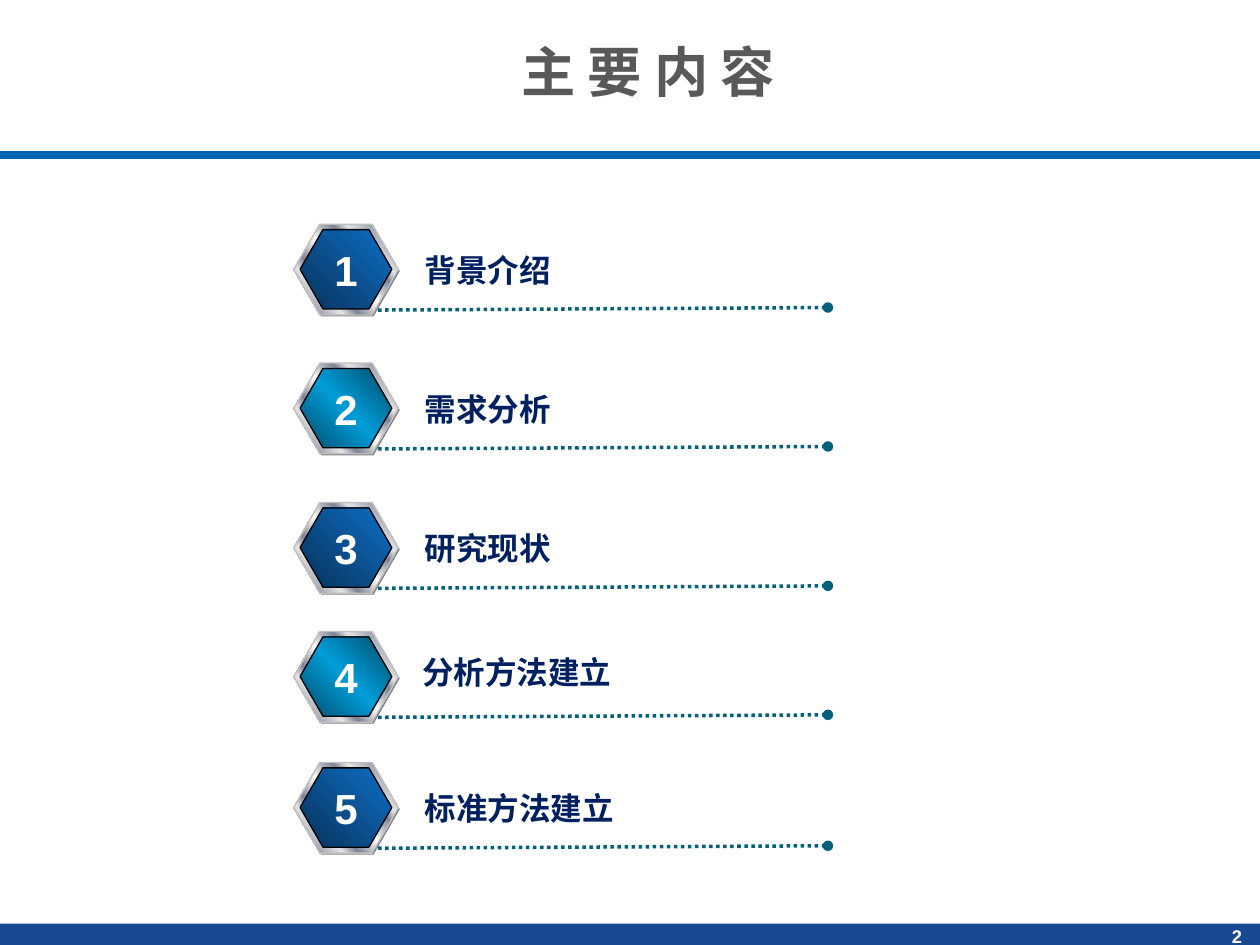
from lxml import etree
from pptx import Presentation
from pptx import util as u
from pptx.dml.color import RGBColor
from pptx.enum import dml, shapes, text
from pptx.oxml.ns import qn

WHITE = RGBColor(0xFF, 0xFF, 0xFF)
BLACK = RGBColor(0x00, 0x00, 0x00)
GREY = RGBColor(0x80, 0x80, 0x80)
SILVER = RGBColor(0xC0, 0xC0, 0xC0)
TITLE_GREY = RGBColor(0x59, 0x59, 0x59)
NAVY = RGBColor(0x00, 0x20, 0x60)
FOOTER_BLUE = RGBColor(0x19, 0x49, 0x93)
RULE_BLUE = RGBColor(0x00, 0x65, 0xB0)
TEAL = RGBColor(0x04, 0x61, 0x7B)
DARK_BLUE = RGBColor(0x07, 0x32, 0x5B)
BLUE = RGBColor(0x0F, 0x6F, 0xC6)
DARK_CYAN = RGBColor(0x00, 0x48, 0x64)
CYAN = RGBColor(0x00, 0x9D, 0xD9)
LIGHT = RGBColor(0xE6, 0xE6, 0xE6)
STEEL = RGBColor(0x7D, 0x84, 0x96)

METAL = [(0, LIGHT), (8, STEEL), (26, LIGHT), (34, STEEL), (46, LIGHT), (50, WHITE),
         (53, LIGHT), (66, STEEL), (73, LIGHT), (92, STEEL), (100, LIGHT)]
BLUE_FACE = [(0, DARK_BLUE), (100, BLUE)]
CYAN_FACE = [(0, DARK_CYAN), (50, CYAN), (100, DARK_CYAN)]

LATIN, CJK = "Arial", "Noto Sans CJK SC"

# label, top of the badge, left and top offset of the label (cm)
ITEMS = [
    ("背景介绍", 4.52, 8.31, 0.41),
    ("需求分析", 7.32, 8.31, 0.41),
    ("研究现状", 10.13, 8.31, 0.41),
    ("分析方法建立", 12.73, 8.26, 0.3),
    ("标准方法建立", 15.37, 8.31, 0.41),
]


def write(tf, content, size, color, font=LATIN, align=text.PP_ALIGN.CENTER,
          anchor=text.MSO_ANCHOR.TOP, wrap=True):
    tf.word_wrap = wrap
    tf.auto_size = text.MSO_AUTO_SIZE.NONE
    tf.vertical_anchor = anchor
    p = tf.paragraphs[0]
    p.alignment = align
    r = p.add_run()
    r.text = content
    r.font.size = u.Pt(size)
    r.font.bold = True
    r.font.name = font
    r.font.color.rgb = color
    etree.SubElement(r.font._element, qn("a:ea"), typeface=font)


def add_text(parent, x, y, w, h, content, size, color, **fmt):
    sp = parent.shapes.add_textbox(u.Cm(x), u.Cm(y), u.Cm(w), u.Cm(h))
    write(sp.text_frame, content, size, color, **fmt)
    return sp


def set_gradient(sp, stops):
    """Fill from bottom left to top right with (percent, colour) stops."""
    sp.fill.gradient()
    sp.fill.gradient_angle = 45
    gs_list = sp._element.spPr.find(".//" + qn("a:gsLst"))
    for gs in list(gs_list):
        gs_list.remove(gs)
    for pos, color in stops:
        gs = etree.SubElement(gs_list, qn("a:gs"), pos=str(pos * 1000))
        etree.SubElement(gs, qn("a:srgbClr"), val=str(color))


def add_shape(parent, kind, x, y, w, h, fill, line=None):
    """Add a shape; fill is one colour or a list of gradient stops."""
    sp = parent.shapes.add_shape(kind, u.Cm(x), u.Cm(y), u.Cm(w), u.Cm(h))
    sp.shadow.inherit = False
    if isinstance(fill, list):
        set_gradient(sp, fill)
    else:
        sp.fill.solid()
        sp.fill.fore_color.rgb = fill
    if line is None:
        sp.line.fill.background()
    else:
        sp.line.color.rgb = line
        sp.line.width = u.Pt(0.75)
    return sp


def add_hexagon(parent, x, y, w, h, fill, line=None):
    sp = add_shape(parent, shapes.MSO_SHAPE.HEXAGON, x, y, w, h, fill, line)
    sp.adjustments[0] = 0.289


def add_line(parent, x1, y1, x2, y2, color, width):
    cx = parent.shapes.add_connector(shapes.MSO_CONNECTOR.STRAIGHT,
                                     u.Cm(x1), u.Cm(y1), u.Cm(x2), u.Cm(y2))
    cx.line.color.rgb = color
    cx.line.width = u.Pt(width)
    etree.SubElement(cx._element.spPr, qn("a:effectLst"))
    return cx


def add_dotted_line(parent, x1, y1, x2, y2):
    cx = add_line(parent, x1, y1, x2, y2, TEAL, 2)
    cx.line.dash_style = dml.MSO_LINE.ROUND_DOT
    etree.SubElement(cx.line._get_or_add_ln(), qn("a:tailEnd"), type="oval")


def add_item(s, number, label, top, label_left, label_drop):
    grp = s.shapes.add_group_shape()
    add_hexagon(grp, 5.95, top + 0.03, 2.11, 1.83, GREY)
    add_hexagon(grp, 5.92, top, 2.11, 1.83, METAL, SILVER)
    face = BLUE_FACE if number % 2 else CYAN_FACE
    add_hexagon(grp, 6.05, top + 0.11, 1.85, 1.6, face, BLACK)
    add_dotted_line(grp, 7.62, top + 1.73, 16.69, top + 1.68)
    add_text(grp, label_left, top + label_drop, 8.2, 1.02, label, 18, NAVY,
             font=CJK, align=text.PP_ALIGN.JUSTIFY)
    add_text(grp, 6.48, top + 0.28, 0.99, 1.27, str(number), 24, WHITE, wrap=False)


def add_title(s, content):
    sp = s.shapes.title
    sp.left, sp.top, sp.width, sp.height = u.Cm(3.84), u.Cm(0.64), u.Cm(18.44), u.Cm(1.73)
    write(sp.text_frame, content, 31, TITLE_GREY, font=CJK)


def add_page_number(s, number):
    sp = add_text(s, 21.89, 18.52, 3.43, 0.71, str(number), 10.5, WHITE,
                  align=text.PP_ALIGN.RIGHT, anchor=text.MSO_ANCHOR.MIDDLE)
    tf = sp.text_frame
    tf.margin_left = tf.margin_right = u.Cm(0.28)
    tf.margin_top = tf.margin_bottom = u.Cm(0.15)


def main():
    prs = Presentation()
    prs.slide_width, prs.slide_height = u.Cm(25.4), u.Cm(19.05)
    s = prs.slides.add_slide(prs.slide_layouts[5])
    add_shape(s, shapes.MSO_SHAPE.RECTANGLE, 0, 18.62, 25.4, 0.5, FOOTER_BLUE)
    add_line(s, 0, 3.12, 25.4, 3.12, RULE_BLUE, 4.5)
    add_title(s, "主 要 内 容")
    for number, item in enumerate(ITEMS, 1):
        add_item(s, number, *item)
    add_page_number(s, 2)
    prs.save("out.pptx")


if __name__ == "__main__":
    main()
